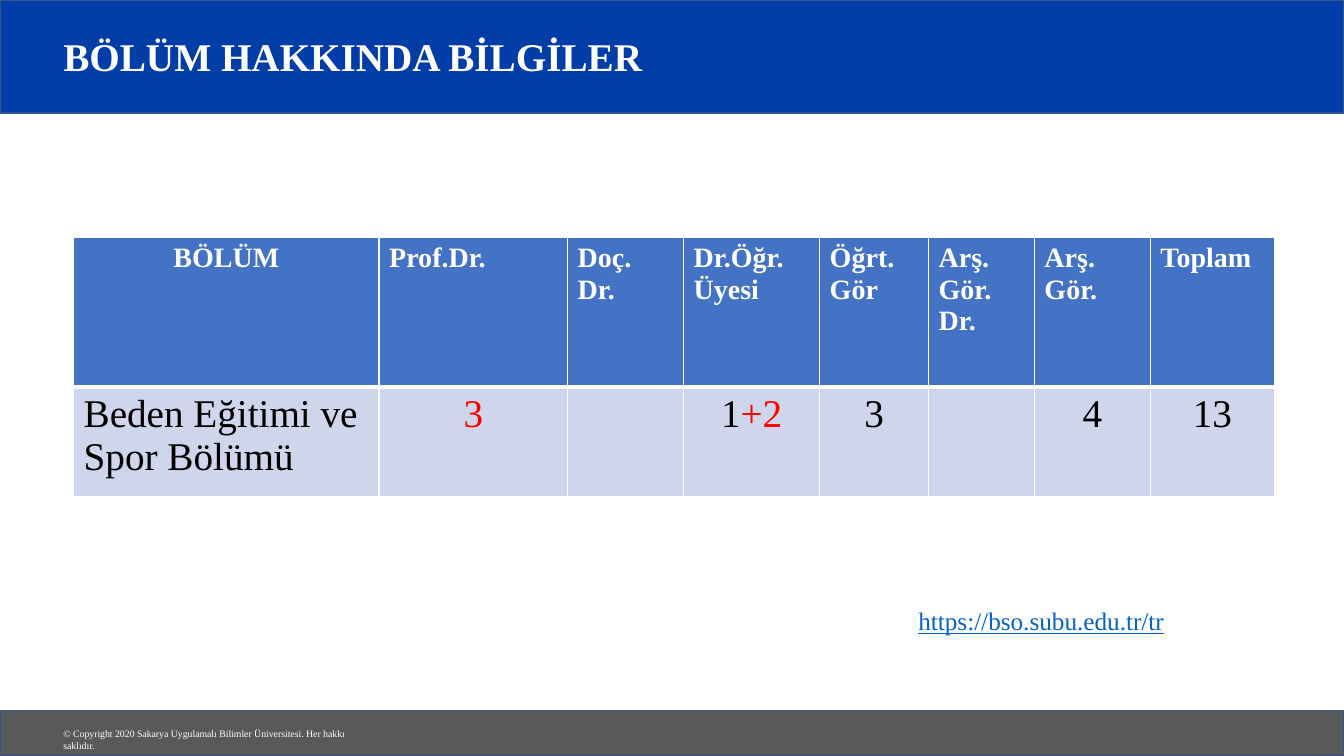
import pptx
import pptx.util
import pptx.dml.color
import pptx.enum.shapes
import pptx.enum.text
import pptx.oxml
import pptx.oxml.ns
from lxml import etree

Inches, Pt = pptx.util.Inches, pptx.util.Pt
RGBColor = pptx.dml.color.RGBColor
PP_ALIGN = pptx.enum.text.PP_ALIGN

WHITE = RGBColor(0xFF, 0xFF, 0xFF)
BLACK = RGBColor(0, 0, 0)
RED = RGBColor(0xFF, 0, 0)
BANNER_BLUE = RGBColor(0x00, 0x3D, 0xA6)
FOOTER_GRAY = RGBColor(0x59, 0x59, 0x59)
BAND_EDGE = RGBColor(0x32, 0x54, 0x91)
HEADER_BLUE = RGBColor(0x44, 0x72, 0xC4)
ROW_BLUE = RGBColor(0xCF, 0xD5, 0xEA)
LINK_BLUE = RGBColor(0x05, 0x63, 0xC1)

FONT = "Times New Roman"
SLIDE_W, SLIDE_H = 13.33, 7.5
BANNER_H, FOOTER_H = 1.12, 0.45
MARGIN = 0.53

TITLE = "BÖLÜM HAKKINDA BİLGİLER"
COPYRIGHT = "© Copyright 2020 Sakarya Uygulamalı Bilimler Üniversitesi. Her hakkı saklıdır."
ADDRESS = "https://bso.subu.edu.tr/tr"

# Heading, column width, and the runs of the department's row
STAFF = [
    ("BÖLÜM", 3.03, [("Beden Eğitimi ve Spor Bölümü", BLACK)]),
    ("Prof.Dr.", 1.87, [("3", RED)]),
    ("Doç. Dr.", 1.15, []),
    ("Dr.Öğr. Üyesi", 1.35, [("1", BLACK), ("+2", RED)]),
    ("Öğrt. Gör", 1.08, [("3", BLACK)]),
    ("Arş. Gör. Dr.", 1.05, []),
    ("Arş. Gör.", 1.15, [("4", BLACK)]),
    ("Toplam", 1.23, [("13", BLACK)]),
]
TABLE_LEFT, TABLE_TOP = 0.73, 2.36
ROW_HEIGHTS = [1.48, 1.09]


def write(paragraph, text, size, color, bold=False, underline=False):
    run = paragraph.add_run()
    run.text = text
    font = run.font
    font.name, font.size, font.bold = FONT, Pt(size), bold
    font.underline = underline
    font.color.rgb = color


def add_band(slide, top, height, color):
    band = slide.shapes.add_shape(
        pptx.enum.shapes.MSO_SHAPE.RECTANGLE,
        0, Inches(top), Inches(SLIDE_W), Inches(height))
    band.shadow.inherit = False
    band.fill.solid()
    band.fill.fore_color.rgb = color
    band.line.color.rgb = BAND_EDGE
    band.line.width = Pt(1)


def add_text(slide, box, text, size, color, bold=False, underline=False, middle=False):
    frame = slide.shapes.add_textbox(*map(Inches, box)).text_frame
    frame.word_wrap = True
    if middle:
        frame.vertical_anchor = pptx.enum.text.MSO_ANCHOR.MIDDLE
    write(frame.paragraphs[0], text, size, color, bold, underline)


def style_cell(cell, fill, bottom_width):
    """Fill the cell and rule it in white, with its own bottom line width."""
    properties = cell._tc.get_or_add_tcPr()
    for side, width in (("lnL", 1), ("lnR", 1), ("lnT", 1), ("lnB", bottom_width)):
        line = etree.SubElement(properties, pptx.oxml.ns.qn("a:" + side), w=str(Pt(width)))
        solid = etree.SubElement(line, pptx.oxml.ns.qn("a:solidFill"))
        etree.SubElement(solid, pptx.oxml.ns.qn("a:srgbClr"), val=str(WHITE))
    cell.fill.solid()
    cell.fill.fore_color.rgb = fill


def add_staff_table(slide):
    total_width = sum(width for _, width, _ in STAFF)
    table = slide.shapes.add_table(
        len(ROW_HEIGHTS), len(STAFF), Inches(TABLE_LEFT), Inches(TABLE_TOP),
        Inches(total_width), Inches(sum(ROW_HEIGHTS))).table
    for row, height in zip(table.rows, ROW_HEIGHTS):
        row.height = Inches(height)
    for column, (heading, width, counts) in enumerate(STAFF):
        table.columns[column].width = Inches(width)
        head, body = table.cell(0, column), table.cell(1, column)
        style_cell(head, HEADER_BLUE, 3)
        style_cell(body, ROW_BLUE, 1)
        head_line = head.text_frame.paragraphs[0]
        body_line = body.text_frame.paragraphs[0]
        # The department name sits left under a centred heading; counts do the reverse
        centred = head_line if column == 0 else body_line
        centred.alignment = PP_ALIGN.CENTER
        write(head_line, heading, 20, WHITE, bold=True)
        for text, color in counts:
            write(body_line, text, 28, color)


def main():
    deck = pptx.Presentation()
    deck.slide_width, deck.slide_height = Inches(SLIDE_W), Inches(SLIDE_H)
    slide = deck.slides.add_slide(deck.slide_layouts[6])
    add_band(slide, 0, BANNER_H, BANNER_BLUE)
    add_band(slide, SLIDE_H - FOOTER_H, FOOTER_H, FOOTER_GRAY)
    add_text(slide, (MARGIN, 7.17, 3.29, 0.22), COPYRIGHT, 7, WHITE)
    add_text(slide, (MARGIN, 0.19, 11.03, 0.73), TITLE, 28, WHITE, bold=True, middle=True)
    add_staff_table(slide)
    add_text(slide, (9.01, 5.96, 2.73, 0.4), ADDRESS, 18, LINK_BLUE, underline=True)
    deck.save("out.pptx")


if __name__ == "__main__":
    main()
